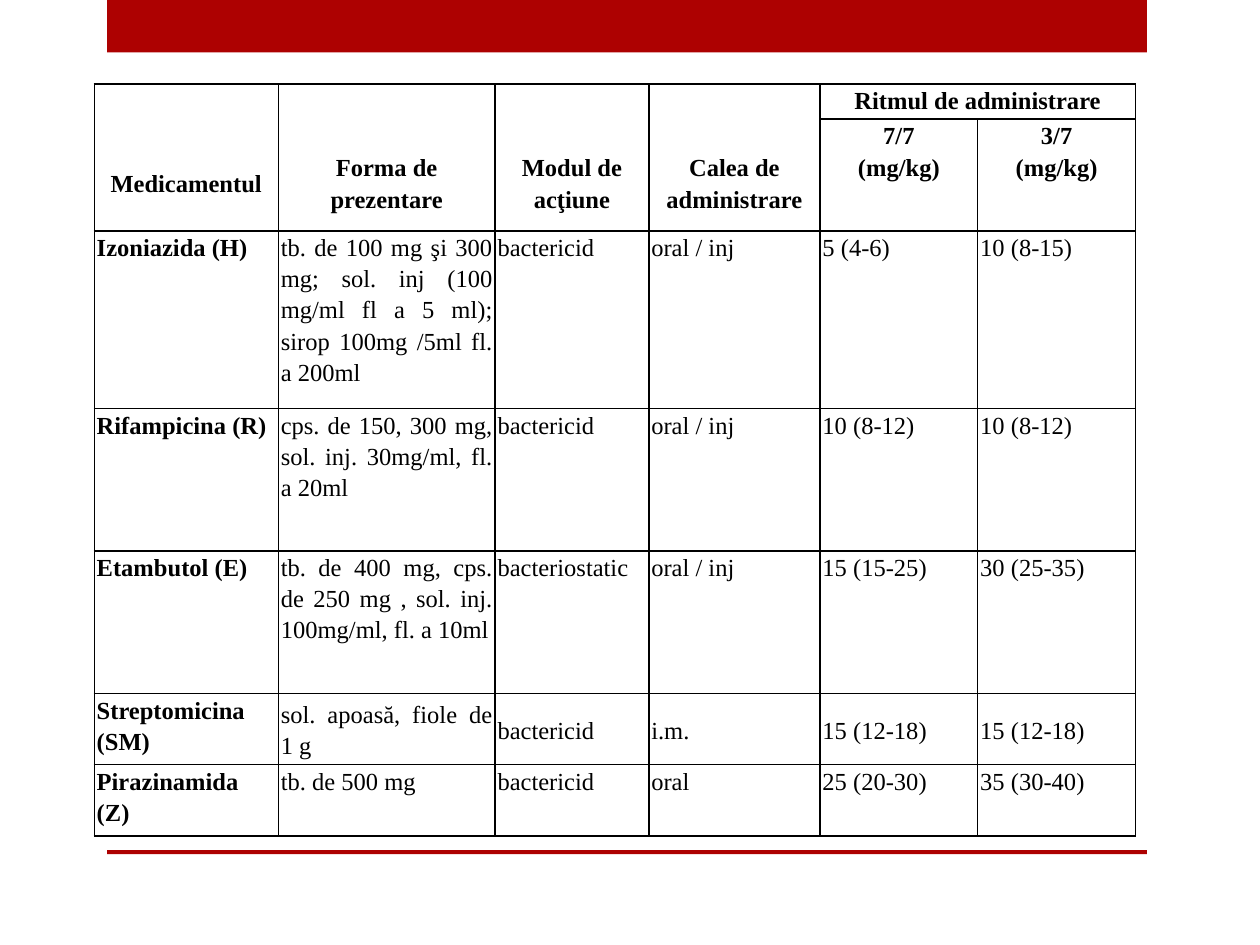
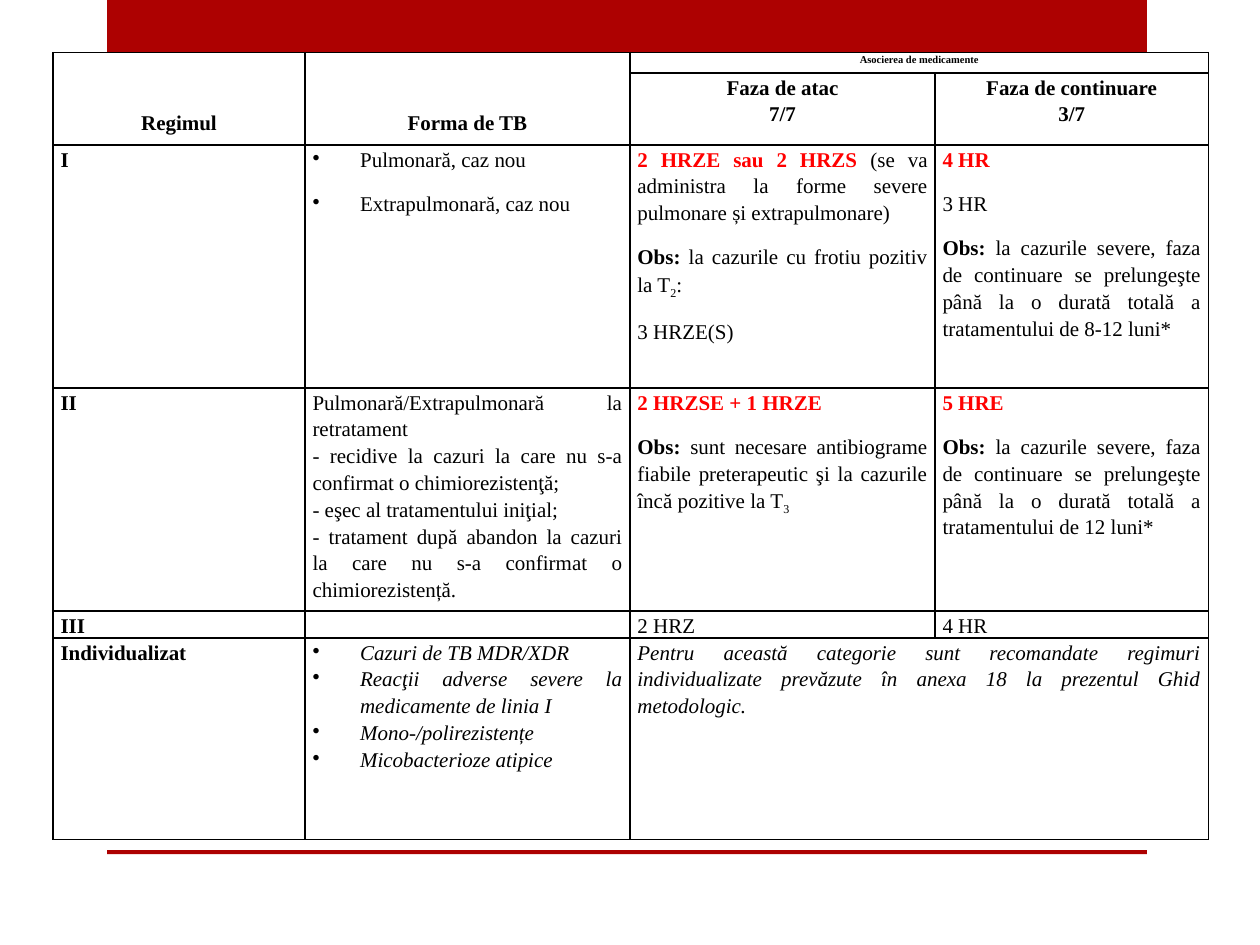
from lxml import etree
from pptx import Presentation
from pptx.dml.color import RGBColor
from pptx.enum.shapes import MSO_SHAPE
from pptx.enum.text import MSO_ANCHOR, PP_ALIGN
from pptx.oxml.ns import qn
from pptx.util import Cm, Pt

RECTANGLE = MSO_SHAPE.RECTANGLE
MIDDLE, TOP = MSO_ANCHOR.MIDDLE, MSO_ANCHOR.TOP
CENTER, JUSTIFY = PP_ALIGN.CENTER, PP_ALIGN.JUSTIFY

COLORS = {"band": "AD0101", "text": "000000", "regimen": "FF0000"}
FONT = "Times New Roman"
BANDS = [(2.16, 0, 20.96, 1.06), (2.16, 17.14, 20.96, 0.08)]

BOLD, RED, SUBSCRIPT = "bold", "red", "subscript"
OBS = ("Obs:", BOLD)
PROLONGED = " la cazurile severe, faza de continuare se prelungeşte până la o durată totală a tratamentului de "

DRUGS = {
    "at": (1.9, 1.69),
    "columns": [3.71, 4.37, 3.1, 3.45, 3.18, 3.18],
    "heights": [0.71, 2.24, 3.58, 2.87, 2.87, 1.44, 1.44],
    "size": 14,
    "inset": 0.05,
    "header_drop": 1.0,
    "merges": [(0, 0, 1, 0), (0, 1, 1, 1), (0, 2, 1, 2), (0, 3, 1, 3), (0, 4, 0, 5)],
    "middle_rows": [5],
    "tight": [(1, 4), (1, 5)],
    "rows": [
        ["Medicamentul", "Forma de prezentare", "Modul de acţiune", "Calea de administrare",
         "Ritmul de administrare", None],
        [None, None, None, None, ["7/7", "(mg/kg)"], ["3/7", "(mg/kg)"]],
        ["Izoniazida (H)",
         "tb. de 100 mg şi 300 mg; sol. inj (100 mg/ml fl a 5 ml); sirop 100mg /5ml fl. a 200ml",
         "bactericid", "oral / inj", "5 (4-6)", "10 (8-15)"],
        ["Rifampicina (R)", "cps. de 150, 300 mg, sol. inj. 30mg/ml, fl. a 20ml",
         "bactericid", "oral / inj", "10 (8-12)", "10 (8-12)"],
        ["Etambutol (E)", "tb. de 400 mg, cps. de 250 mg , sol. inj. 100mg/ml, fl. a 10ml",
         "bacteriostatic", "oral / inj", "15 (15-25)", "30 (25-35)"],
        ["Streptomicina (SM)", "sol. apoasă, fiole de 1 g",
         "bactericid", "i.m.", "15 (12-18)", "15 (12-18)"],
        ["Pirazinamida (Z)", "tb. de 500 mg", "bactericid", "oral", "25 (20-30)", "35 (30-40)"],
    ],
}

REGIMENS = {
    "at": (1.07, 1.06),
    "columns": [5.08, 6.55, 6.15, 5.51],
    "heights": [0.41, 1.45, 4.9, 4.5, 0.54, 4.06],
    "size": 12,
    "inset": 0.15,
    "header_drop": 0.91,
    "merges": [(0, 0, 1, 0), (0, 1, 1, 1), (0, 2, 0, 3), (5, 2, 5, 3)],
    "tight": [(1, 2), (1, 3), (3, 1), (5, 1)],
    "bullets": [(2, 1), (5, 1)],
    "italics": [(5, 1), (5, 2)],
    "sizes": {(0, 2): 6},
    "rows": [
        ["Regimul", "Forma de TB", "Asocierea de medicamente", None],
        [None, None, ["Faza de atac", "7/7"], ["Faza de continuare", "3/7"]],
        ["I",
         ["Pulmonară, caz nou", "Extrapulmonară, caz nou"],
         [[("2 HRZE sau 2 HRZS ", RED),
           "(se va administra la forme severe pulmonare și extrapulmonare)"],
          [OBS, " la cazurile cu frotiu pozitiv la T", ("2", SUBSCRIPT), ":"],
          "3 HRZE(S)"],
         [[("4 HR", RED)], "3 HR", [OBS, PROLONGED + "8-12 luni*"]]],
        ["II",
         ["Pulmonară/Extrapulmonară la retratament",
          "- recidive la cazuri la care nu s-a confirmat o chimiorezistenţă;",
          "- eşec al tratamentului iniţial;",
          "- tratament după abandon la cazuri la care nu s-a confirmat o chimiorezistență."],
         [[("2 HRZSE + 1 HRZE", RED)],
          [OBS, " sunt necesare antibiograme fiabile preterapeutic şi la cazurile încă pozitive la T",
           ("3", SUBSCRIPT)]],
         [[("5 HRE", RED)], [OBS, PROLONGED + "12 luni*"]]],
        ["III", "", "2 HRZ", "4 HR"],
        ["Individualizat",
         ["Cazuri de TB MDR/XDR", "Reacţii adverse severe la medicamente de linia I",
          "Mono-/polirezistențe", "Micobacterioze atipice"],
         "Pentru această categorie sunt recomandate regimuri individualizate "
         "prevăzute în anexa 18 la prezentul Ghid metodologic.", None],
    ],
}


def rgb(name):
    return RGBColor.from_string(COLORS[name])


def move_bands_to_master(deck, slide):
    for box in BANDS:
        band = slide.shapes.add_shape(RECTANGLE, *map(Cm, box))
        band.shadow.inherit = False
        band.fill.solid()
        band.fill.fore_color.rgb = rgb("band")
        band.line.fill.background()
        deck.slide_master.shapes.element.append(band.element)


def add_borders(cell):
    properties = cell._tc.get_or_add_tcPr()
    for side in ("lnL", "lnR", "lnT", "lnB"):
        line = etree.SubElement(properties, qn("a:" + side), w=str(Pt(1)))
        fill = etree.SubElement(line, qn("a:solidFill"))
        etree.SubElement(fill, qn("a:srgbClr"), val=COLORS["text"])


def add_bullet(paragraph):
    properties = paragraph._p.get_or_add_pPr()
    properties.set("marL", str(Cm(0.96)))
    properties.set("indent", str(-Cm(0.96)))
    bullet = etree.Element(qn("a:buChar"), char="•")
    properties.find(qn("a:defRPr")).addprevious(bullet)


def add_run(paragraph, part):
    text, style = (part, None) if isinstance(part, str) else part
    run = paragraph.add_run()
    run.text = text
    if style in (BOLD, RED):
        run.font.bold = True
    if style == RED:
        run.font.color.rgb = rgb("regimen")
    if style == SUBSCRIPT:
        run.font._element.set("baseline", "-25000")


def write_cell(cell, content, place, spec_sheet):
    row, column = place
    header = row < 2
    size = spec_sheet.get("sizes", {}).get(place, spec_sheet["size"])
    lines = content if isinstance(content, list) else [content]
    for index, line in enumerate(lines):
        paragraph = cell.text_frame.paragraphs[0] if index == 0 else cell.text_frame.add_paragraph()
        paragraph.alignment = CENTER if header else JUSTIFY
        paragraph.line_spacing = 1.15
        last = index == len(lines) - 1
        paragraph.space_after = Pt(0 if place in spec_sheet["tight"] and not last else 10)
        font = paragraph.font
        font.name, font.size = FONT, Pt(size)
        font.color.rgb = rgb("text")
        font.bold = header or column == 0
        font.italic = place in spec_sheet.get("italics", [])
        if place in spec_sheet.get("bullets", []):
            add_bullet(paragraph)
        if not line:
            etree.SubElement(paragraph._p, qn("a:endParaRPr"), sz=str(size * 100))
            continue
        for part in line if isinstance(line, list) else [line]:
            add_run(paragraph, part)


def add_grid(slide, sheet):
    columns, heights = sheet["columns"], sheet["heights"]
    left, top = sheet["at"]
    grid = slide.shapes.add_table(len(heights), len(columns), Cm(left), Cm(top),
                                  Cm(sum(columns)), Cm(sum(heights))).table
    grid.first_row = grid.horz_banding = False
    for column, width in zip(grid.columns, columns):
        column.width = Cm(width)
    for row, height in zip(grid.rows, heights):
        row.height = Cm(height)
    tall_headers = [(r, c) for r, c, r2, c2 in sheet["merges"] if r2 > r]
    for r, contents in enumerate(sheet["rows"]):
        for c, content in enumerate(contents):
            cell = grid.cell(r, c)
            cell.margin_left = cell.margin_right = Cm(sheet["inset"])
            cell.margin_top = Cm(sheet["header_drop"] if (r, c) in tall_headers else 0)
            cell.margin_bottom = 0
            middle = (r, c) in tall_headers or (r in sheet.get("middle_rows", []) and c > 0)
            cell.vertical_anchor = MIDDLE if middle else TOP
            add_borders(cell)
            cell.fill.background()
            if content is not None:
                write_cell(cell, content, (r, c), sheet)
    for r, c, r2, c2 in sheet["merges"]:
        grid.cell(r, c).merge(grid.cell(r2, c2))


def main():
    deck = Presentation()
    deck.slide_width, deck.slide_height = Cm(25.4), Cm(19.05)
    blank = deck.slide_layouts[6]
    for number, sheet in enumerate((DRUGS, REGIMENS)):
        slide = deck.slides.add_slide(blank)
        if number == 0:
            move_bands_to_master(deck, slide)
        add_grid(slide, sheet)
    deck.save("out.pptx")


if __name__ == "__main__":
    main()
